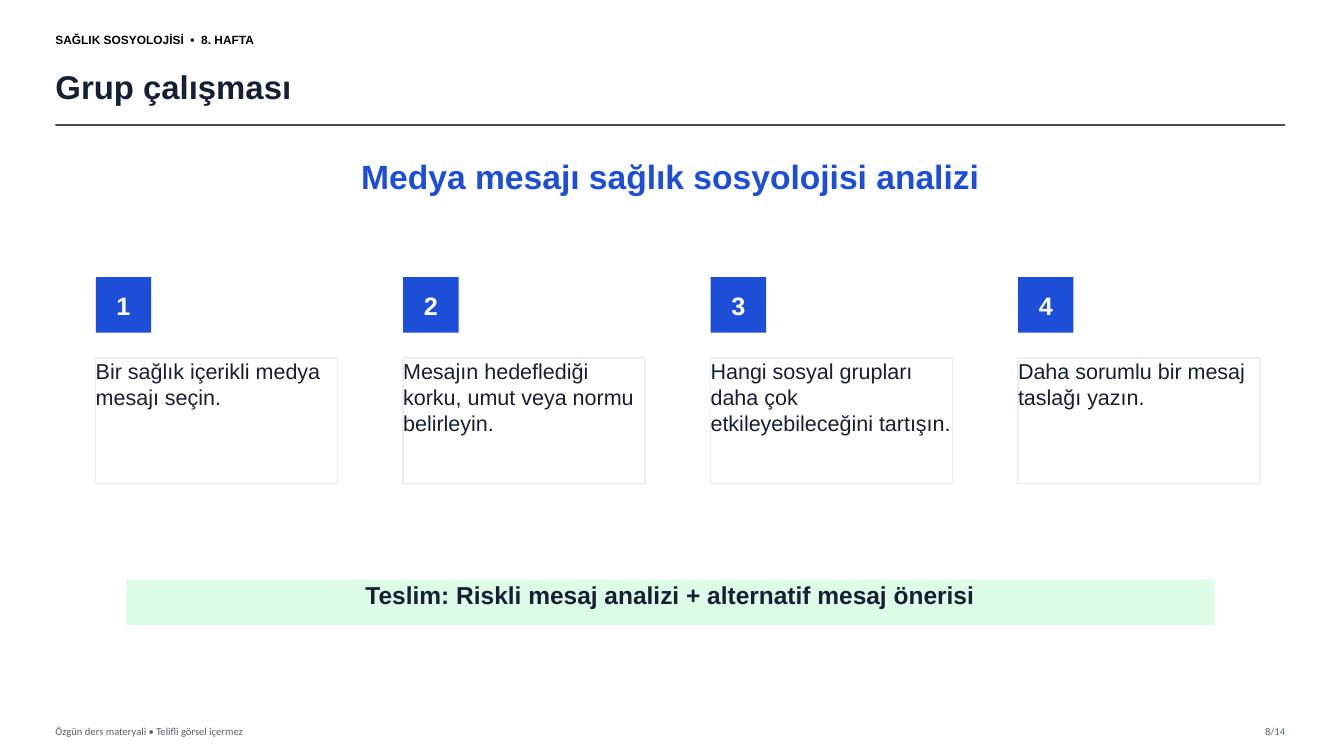
"""Builds the group work slide of a health sociology lecture."""
from lxml import etree
from pptx import Presentation
from pptx.dml.color import RGBColor
from pptx.enum.shapes import MSO_CONNECTOR, MSO_SHAPE
from pptx.enum.text import MSO_ANCHOR, PP_ALIGN
from pptx.oxml.ns import qn
from pptx.util import Pt

LEFT, CENTER, RIGHT = PP_ALIGN.LEFT, PP_ALIGN.CENTER, PP_ALIGN.RIGHT
TOP, MIDDLE = MSO_ANCHOR.TOP, MSO_ANCHOR.MIDDLE
RECT, STRAIGHT = MSO_SHAPE.RECTANGLE, MSO_CONNECTOR.STRAIGHT

COURSE = "SAĞLIK SOSYOLOJİSİ  •  8. HAFTA"
TITLE = "Grup çalışması"
TASK = "Medya mesajı sağlık sosyolojisi analizi"
STEPS = [
    "Bir sağlık içerikli medya mesajı seçin.",
    "Mesajın hedeflediği korku, umut veya normu belirleyin.",
    "Hangi sosyal grupları daha çok etkileyebileceğini tartışın.",
    "Daha sorumlu bir mesaj taslağı yazın.",
]
DELIVERY = "Teslim: Riskli mesaj analizi + alternatif mesaj önerisi"
FOOTER = "Özgün ders materyali • Telifli görsel içermez"
PAGE = "8/14"

INK, BLUE, WHITE, GRAY = "172033", "1D4ED8", "FFFFFF", "506070"
MARGIN, RIGHT_EDGE = 39.6, 918
RULE_Y = 89.28
FOOTER_Y, FOOTER_H = 514.08, 15.84
STEP_X, STEP_PITCH, STEP_W, STEP_H = 68.4, 219.6, 172.8, 90
BADGE_Y, BADGE_SIZE, STEP_Y = 198, 39.6, 255.6


def rgb(color):
    return RGBColor.from_string(color)


def add_text(s, text, x, y, w, h, size, color=INK, bold=False, font="Arial",
             align=LEFT, anchor=MIDDLE, fill=None, line=None):
    box = tuple(Pt(v) for v in (x, y, w, h))
    if fill:
        sp = s.shapes.add_shape(RECT, *box)
        sp.shadow.inherit = False
        sp.fill.solid()
        sp.fill.fore_color.rgb = rgb(fill)
        if line:
            sp.line.color.rgb = rgb(line)
            sp.line.width = Pt(1)
        else:
            sp.line.fill.background()
    else:
        sp = s.shapes.add_textbox(*box)
    tf = sp.text_frame
    tf.word_wrap = True
    tf.vertical_anchor = anchor
    tf.margin_left = tf.margin_top = tf.margin_right = tf.margin_bottom = 0
    p = tf.paragraphs[0]
    p.alignment = align
    r = p.add_run()
    r.text = text
    r.font.name, r.font.size, r.font.bold = font, Pt(size), bold
    r.font.color.rgb = rgb(color)


def add_rule(s):
    rule = s.shapes.add_connector(STRAIGHT, Pt(MARGIN), Pt(RULE_Y), Pt(RIGHT_EDGE), Pt(RULE_Y))
    rule.line.color.rgb = rgb("333333")
    rule.line.width = Pt(1.2)
    sp_pr = rule.element.spPr
    color = sp_pr.find(".//" + qn("a:srgbClr"))
    etree.SubElement(color, qn("a:alpha")).set("val", "85000")
    etree.SubElement(sp_pr, qn("a:effectLst"))


def main():
    prs = Presentation()
    prs.slide_width, prs.slide_height = Pt(960), Pt(540)
    s = prs.slides.add_slide(prs.slide_layouts[6])

    add_text(s, COURSE, MARGIN, 18, 259.2, 20.16, 8.5, color="000000", bold=True)
    add_text(s, TITLE, MARGIN, 41.76, 860.4, 39.6, 23.5, bold=True)
    add_rule(s)
    add_text(s, FOOTER, MARGIN, FOOTER_Y, 432, FOOTER_H, 7.5, color=GRAY, font="Calibri")
    add_text(s, PAGE, RIGHT_EDGE - 46.8, FOOTER_Y, 46.8, FOOTER_H, 7.5, color=GRAY,
             font="Calibri", align=RIGHT)
    add_text(s, TASK, 54, 111.6, 849.6, 46.8, 24, color=BLUE, bold=True, align=CENTER, anchor=TOP)

    for i, step in enumerate(STEPS):
        x = STEP_X + i * STEP_PITCH
        add_text(s, str(i + 1), x, BADGE_Y, BADGE_SIZE, BADGE_SIZE, 18, color=WHITE, bold=True,
                 align=CENTER, fill=BLUE)
        add_text(s, step, x, STEP_Y, STEP_W, STEP_H, 15.4, anchor=TOP, fill=WHITE, line="E8EEF5")

    add_text(s, DELIVERY, 90, 414, 777.6, 32.4, 17.5, bold=True, align=CENTER, anchor=TOP,
             fill="DCFCE7")
    prs.save("out.pptx")


if __name__ == "__main__":
    main()
